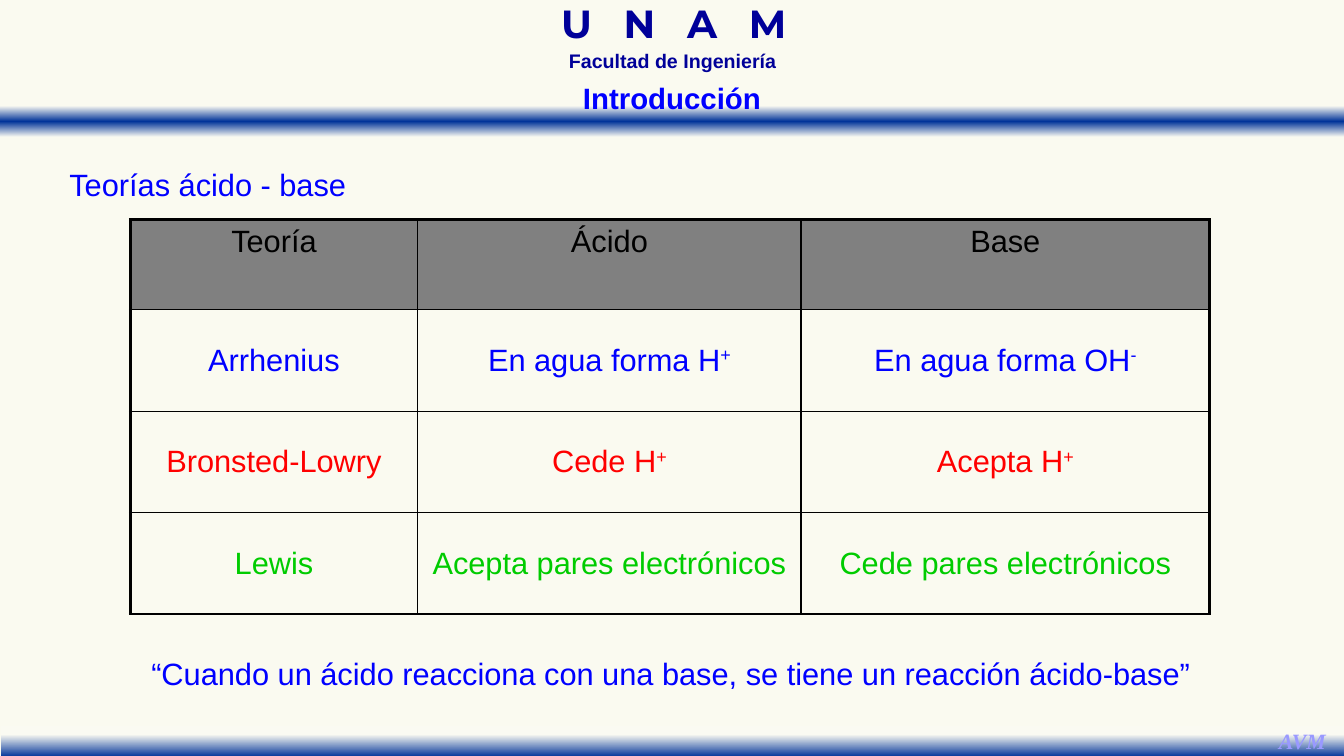
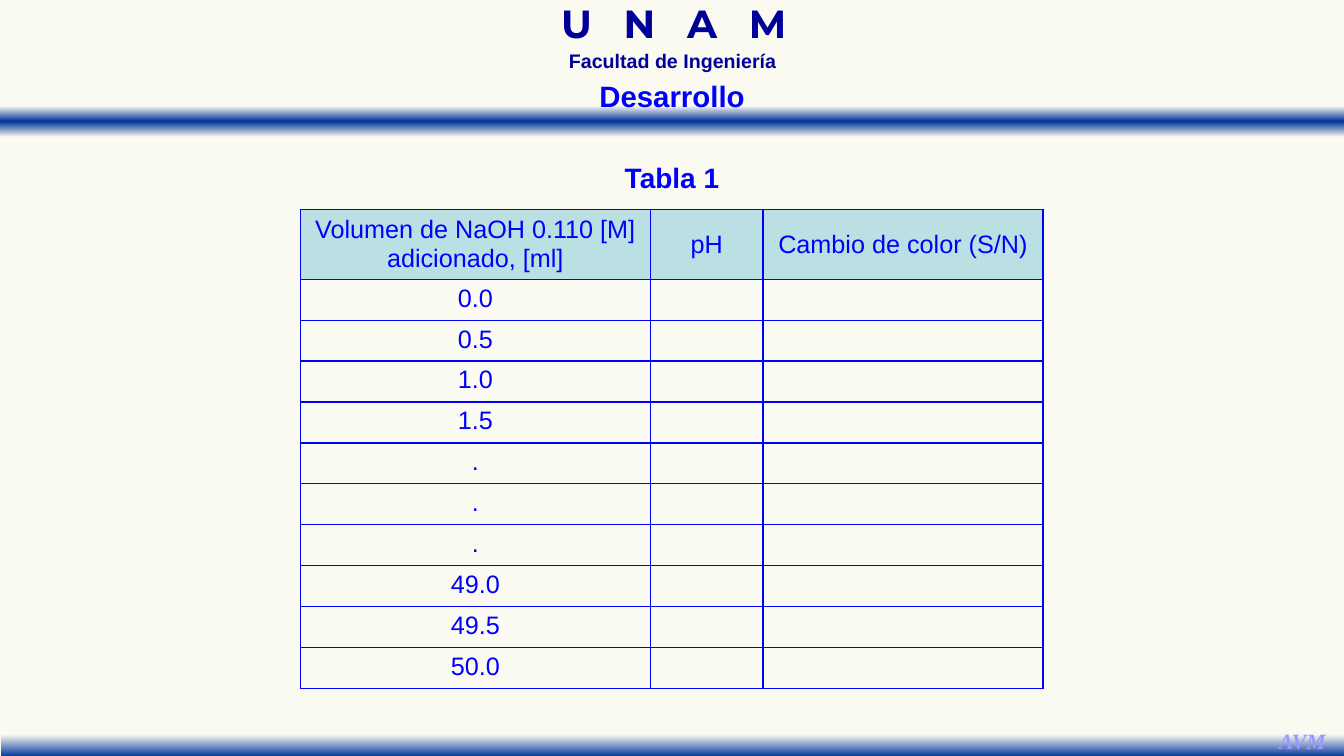
import lxml.etree
import pptx
import pptx.dml.color
import pptx.enum.shapes
import pptx.enum.text
import pptx.oxml.ns
import pptx.util

Pt = pptx.util.Pt
qn = pptx.oxml.ns.qn
ALIGN = pptx.enum.text.PP_ALIGN
ANCHOR = pptx.enum.text.MSO_ANCHOR
SLIDE_WIDTH, SLIDE_HEIGHT = 960, 540
PAPER, BAND_EDGE, BAND = "FAFAF0", "FAFAF2", "003399"
NAVY, BLUE, LILAC = "000099", "0000FF", "9999FF"
BLACK, GRAY, RED, GREEN = "000000", "808080", "FF0000", "00CC00"
PALE_BLUE, WHITE = "BBE0E3", "FFFFFF"


def color(value):
    """Turn a hex string into a colour."""
    return pptx.dml.color.RGBColor.from_string(value)


def add_run(paragraph, text, size, ink, font="Arial", bold=False, italic=False, **attributes):
    """Add one formatted run; attributes go to its properties element."""
    run = paragraph.add_run()
    run.text = text
    run.font.name, run.font.size = font, Pt(size)
    run.font.bold, run.font.italic = bold, italic
    run.font.color.rgb = color(ink)
    for name, value in attributes.items():
        run._r.get_or_add_rPr().set(name, str(value))


def add_text(slide, box, line_spacing=1.0, align=ALIGN.CENTER, wrap=True):
    """Add a text box and return it with its first paragraph."""
    shape = slide.shapes.add_textbox(*map(Pt, box))
    shape.text_frame.word_wrap = wrap
    paragraph = shape.text_frame.paragraphs[0]
    paragraph.alignment, paragraph.line_spacing = align, line_spacing
    return shape, paragraph


def add_band(slide, box, stops):
    """Add a band with a vertical gradient."""
    shape = slide.shapes.add_shape(pptx.enum.shapes.MSO_SHAPE.RECTANGLE, *map(Pt, box))
    shape.shadow.inherit = False
    shape.line.fill.background()
    shape.fill.gradient()
    shape.fill.gradient_angle = 270
    stop_list = shape.element.spPr.find(".//" + qn("a:gsLst"))
    stop_list.clear()
    for position, value in stops:
        stop = lxml.etree.SubElement(stop_list, qn("a:gs"), pos=str(position * 1000))
        lxml.etree.SubElement(stop, qn("a:srgbClr"), val=value)
    return shape


def set_up_layout(presentation, layout):
    """Put the background, bands, heading and signature on the layout."""
    fill = presentation.slide_master.background.fill
    fill.solid()
    fill.fore_color.rgb = color(PAPER)
    slide = presentation.slides[0]
    header = add_band(slide, (-0.5, 75.6, 961, 22.3), [(0, BAND_EDGE), (50, BAND), (100, BAND_EDGE)])
    footer = add_band(slide, (0.5, 518.4, 961, 22.3), [(28, BAND_EDGE), (100, BAND)])
    university, paragraph = add_text(slide, (340.5, 5, 281.5, 32.4), 0.7)
    add_run(paragraph, "U N A ", 28, NAVY, "Montserrat", True, spc=740)
    add_run(paragraph, "M", 28, NAVY, "Montserrat", True)
    faculty, paragraph = add_text(slide, (352, 36, 257, 19.5), 0.7)
    add_run(paragraph, "Facultad de Ingeniería", 14, NAVY, bold=True)
    signature, paragraph = add_text(slide, (905.8, 516.2, 49, 26.6), wrap=False)
    add_run(paragraph, "AVM", 15.6, LILAC, "Times New Roman", True, True)
    for shape in (header, university, faculty, footer, signature):
        layout.shapes.element.append(shape.element)


def set_title(slide, text, top):
    """Place and write the slide title."""
    shape = slide.shapes.title
    shape.left, shape.top, shape.width, shape.height = map(Pt, (336, top, 288, 32.4))
    frame = shape.text_frame
    frame.auto_size = pptx.enum.text.MSO_AUTO_SIZE.NONE
    frame.vertical_anchor = ANCHOR.MIDDLE
    paragraph = frame.paragraphs[0]
    paragraph.alignment = ALIGN.CENTER
    add_run(paragraph, text, 21, BLUE, bold=True)


def set_borders(cell, ink, widths):
    """Draw the left, right, top and bottom borders of a cell."""
    properties = cell._tc.get_or_add_tcPr()
    for index, (side, width) in enumerate(zip("LRTB", widths)):
        line = lxml.etree.Element(qn("a:ln" + side), w=str(Pt(width)))
        fill = lxml.etree.SubElement(line, qn("a:solidFill"))
        lxml.etree.SubElement(fill, qn("a:srgbClr"), val=ink)
        properties.insert(index, line)


def set_fill(cell, value, opacity=100):
    """Fill a cell, or leave it clear when there is no value."""
    if value is None:
        cell.fill.background()
        return
    cell.fill.solid()
    cell.fill.fore_color.rgb = color(value)
    if opacity < 100:
        tint = cell._tc.tcPr.find(qn("a:solidFill") + "/" + qn("a:srgbClr"))
        lxml.etree.SubElement(tint, qn("a:alpha"), val=str(opacity * 1000))


def add_table(slide, left, top, widths, heights, border, outer_width):
    """Add a plain ruled table with thin inner lines."""
    rows, columns = len(heights), len(widths)
    box = map(Pt, (left, top, sum(widths), sum(heights)))
    table = slide.shapes.add_table(rows, columns, *box).table
    table.first_row = table.horz_banding = False
    for column, width in zip(table.columns, widths):
        column.width = Pt(width)
    for row, height in zip(table.rows, heights):
        row.height = Pt(height)
    for r in range(rows):
        for c in range(columns):
            edges = (c == 0, c == columns - 1, r == 0, r == rows - 1)
            set_borders(table.cell(r, c), border, [outer_width if edge else 1 for edge in edges])
    return table


def write_cell(cell, text, size, ink, superscript="", anchor=ANCHOR.MIDDLE):
    """Write centred text with an optional superscript."""
    cell.vertical_anchor = anchor
    paragraph = cell.text_frame.paragraphs[0]
    paragraph.alignment = ALIGN.CENTER
    add_run(paragraph, text, size, ink)
    if superscript:
        add_run(paragraph, superscript, size, ink, baseline=30000)


def build_theories(slide):
    """Build the slide that compares acid and base theories."""
    set_title(slide, "Introducción", 53.3)
    theories = [
        (BLACK, [("Teoría", ""), ("Ácido", ""), ("Base", "")]),
        (BLUE, [("Arrhenius", ""), ("En agua forma H", "+"), ("En agua forma OH", "-")]),
        (RED, [("Bronsted-Lowry", ""), ("Cede H", "+"), ("Acepta H", "+")]),
        (GREEN, [("Lewis", ""), ("Acepta pares electrónicos", ""), ("Cede pares electrónicos", "")]),
    ]
    table = add_table(slide, 93, 156.8, (205.4, 273.8, 291.8), (64.4, 72.5, 72.5, 72.5), BLACK, 2.25)
    for r, (ink, entries) in enumerate(theories):
        for c, (text, superscript) in enumerate(entries):
            cell = table.cell(r, c)
            set_fill(cell, None if r else GRAY)
            write_cell(cell, text, 22, ink, superscript, ANCHOR.MIDDLE if r else ANCHOR.TOP)
    paragraph = add_text(slide, (42.5, 104.4, 873.4, 44.6), 1.4, ALIGN.JUSTIFY)[1]
    add_run(paragraph, "Teorías ácido - base", 22, BLUE)
    paragraph = add_text(slide, (42.5, 453.6, 873.4, 40.3), 1.4)[1]
    add_run(paragraph, "“Cuando un ácido reacciona con una base, se tiene un reacción ácido-base”", 22, BLUE)


def build_titration(slide):
    """Build the slide with the titration record table."""
    set_title(slide, "Desarrollo", 52)
    headings = ("Volumen de NaOH 0.110 [M] adicionado, [ml]", "pH", "Cambio de color (S/N)")
    volumes = ("0.0", "0.5", "1.0", "1.5", ".", ".", ".", "49.0", "49.5", "50.0")
    heights = [50] + [29.25] * len(volumes)
    table = add_table(slide, 214.5, 149.5, (250, 80.5, 200), heights, BLUE, 1)
    for c, heading in enumerate(headings):
        set_fill(table.cell(0, c), PALE_BLUE)
        write_cell(table.cell(0, c), heading, 18, BLUE)
    for r, volume in enumerate(volumes, 1):
        for c in range(len(headings)):
            set_fill(table.cell(r, c), WHITE if r % 2 else None, 20)
        write_cell(table.cell(r, 0), volume, 18, BLUE, anchor=ANCHOR.TOP)
    paragraph = add_text(slide, (42, 99.4, 876, 40.3), 1.5)[1]
    add_run(paragraph, "Tabla 1", 20, BLUE, bold=True)


def main():
    """Build and save the presentation."""
    presentation = pptx.Presentation()
    presentation.slide_width, presentation.slide_height = Pt(SLIDE_WIDTH), Pt(SLIDE_HEIGHT)
    layout = presentation.slide_layouts.get_by_name("Title Only")
    builders = (build_theories, build_titration)
    slides = [presentation.slides.add_slide(layout) for _ in builders]
    set_up_layout(presentation, layout)
    for build, slide in zip(builders, slides):
        build(slide)
    presentation.save("out.pptx")


if __name__ == "__main__":
    main()
